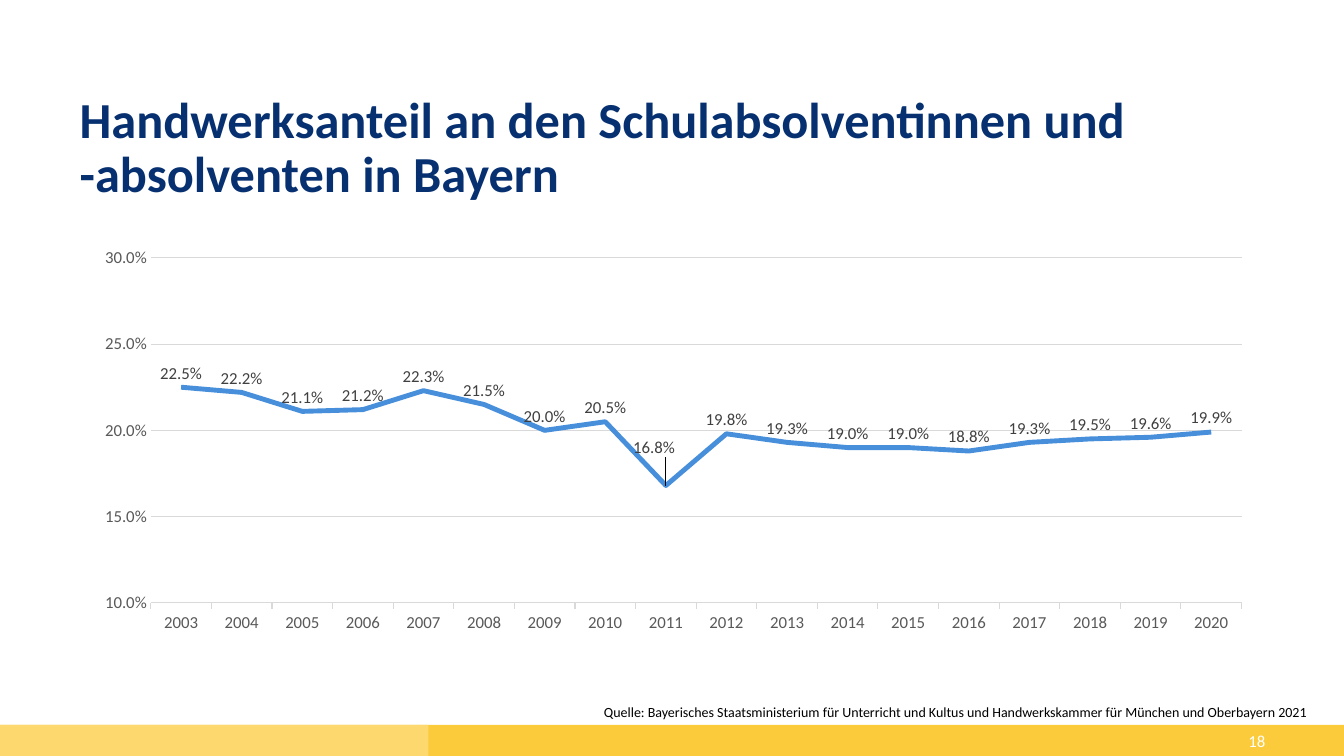
from lxml import etree
from pptx import Presentation
from pptx.chart.data import CategoryChartData
from pptx.dml.color import RGBColor
from pptx.enum.chart import XL_CHART_TYPE, XL_LABEL_POSITION, XL_MARKER_STYLE, XL_TICK_MARK
from pptx.enum.shapes import MSO_SHAPE
from pptx.enum.text import MSO_ANCHOR, MSO_AUTO_SIZE, PP_ALIGN
from pptx.oxml import parse_xml
from pptx.oxml.ns import nsdecls, qn
from pptx.util import Inches, Pt

LINE_CHART = XL_CHART_TYPE.LINE
LABEL_ABOVE = XL_LABEL_POSITION.ABOVE
NO_MARKER = XL_MARKER_STYLE.NONE
TICK_NONE, TICK_OUTSIDE = XL_TICK_MARK.NONE, XL_TICK_MARK.OUTSIDE
RECTANGLE = MSO_SHAPE.RECTANGLE
TOP, MIDDLE = MSO_ANCHOR.TOP, MSO_ANCHOR.MIDDLE
NO_AUTOFIT = MSO_AUTO_SIZE.NONE
LEFT, RIGHT = PP_ALIGN.LEFT, PP_ALIGN.RIGHT

NAVY = RGBColor(0x07, 0x30, 0x70)
BLUE = RGBColor(0x48, 0x8F, 0xDB)
YELLOW = RGBColor(0xFB, 0xCB, 0x3C)
LIGHT_YELLOW = RGBColor(0xFC, 0xD8, 0x6E)
GRID_GRAY = RGBColor(0xD9, 0xD9, 0xD9)
AXIS_GRAY = RGBColor(0x59, 0x59, 0x59)
LABEL_GRAY = RGBColor(0x40, 0x40, 0x40)
BLACK = RGBColor(0, 0, 0)
WHITE = RGBColor(0xFF, 0xFF, 0xFF)
FONT = "Calibri"
PERCENT = "0.0%"


def format_font(font, size, color, bold=False):
    for name, value in {"name": FONT, "size": Pt(size), "bold": bold}.items():
        setattr(font, name, value)
    font.color.rgb = color


def manual_layout(values):
    layout = parse_xml(f"<c:layout {nsdecls('c')}><c:manualLayout/></c:layout>")
    for name, value in values.items():
        etree.SubElement(layout[0], qn(f"c:{name}")).set("val", str(value))
    return layout


presentation = Presentation()
presentation.slide_width = Inches(13.33)
presentation.slide_height = Inches(7.5)
slide = presentation.slides.add_slide(presentation.slide_layouts[5])

for width, color in ((13.33, YELLOW), (4.25, LIGHT_YELLOW)):
    footer_bar = slide.shapes.add_shape(RECTANGLE, 0, Inches(7.19), Inches(width), Inches(0.31))
    footer_bar.shadow.inherit = False
    footer_bar.fill.solid()
    footer_bar.fill.fore_color.rgb = color
    footer_bar.line.fill.background()

title = slide.shapes.title
title.left, title.top, title.width, title.height = map(Inches, (0.79, 0.94, 11.76, 1.05))
page_number = slide.shapes.add_textbox(Inches(9.55), Inches(7.19), Inches(3), Inches(0.31))
source = slide.shapes.add_textbox(Inches(5.99), Inches(6.98), Inches(7.11), Inches(0.17))

texts = (
    (title, "Handwerksanteil an den Schulabsolventinnen und\v-absolventen in Bayern",
     36, NAVY, True, LEFT, TOP, True),
    (page_number, "18", 12, WHITE, False, RIGHT, MIDDLE, True),
    (source, "Quelle: Bayerisches Staatsministerium für Unterricht und Kultus und "
     "Handwerkskammer für München und Oberbayern 2021", 10, BLACK, False, LEFT, TOP, False),
)
for shape, text, size, color, bold, alignment, anchor, wrap in texts:
    frame = shape.text_frame
    frame.text = text
    frame_format = {
        "margin_left": 0, "margin_top": 0, "margin_right": 0, "margin_bottom": 0,
        "auto_size": NO_AUTOFIT, "word_wrap": wrap, "vertical_anchor": anchor,
    }
    for name, value in frame_format.items():
        setattr(frame, name, value)
    paragraph = frame.paragraphs[0]
    paragraph.alignment = alignment
    for run in paragraph.runs:
        format_font(run.font, size, color, bold)
title.text_frame.paragraphs[0].line_spacing = 0.9

chart_data = CategoryChartData(number_format=PERCENT)
chart_data.categories = [str(year) for year in range(2003, 2021)]
chart_data.add_series("Series 1", (
    0.225, 0.222, 0.211, 0.212, 0.223, 0.215, 0.200, 0.205, 0.168,
    0.198, 0.193, 0.190, 0.190, 0.188, 0.193, 0.195, 0.196, 0.199,
))
chart = slide.shapes.add_chart(
    LINE_CHART, Inches(0.79), Inches(2.36), Inches(11.76), Inches(3.98), chart_data
).chart
chart.has_title = False
chart.has_legend = False
format_font(chart.font, 10, BLACK)

plot_area = chart.plots[0]._element.getparent()
for layout in plot_area.findall(qn("c:layout")):
    plot_area.remove(layout)
plot_area.insert(0, manual_layout({
    "layoutTarget": "inner", "xMode": "edge", "yMode": "edge",
    "x": 0.06, "y": 0.05, "w": 0.92, "h": 0.86,
}))

value_axis = chart.value_axis
value_axis.minimum_scale = 0.1
value_axis.maximum_scale = 0.3
value_axis.major_unit = 0.05
value_axis.has_major_gridlines = True
value_axis.tick_labels.number_format = PERCENT
value_axis.tick_labels.number_format_is_linked = False
value_axis.format.line.fill.background()
for axis, tick_mark in ((chart.category_axis, TICK_OUTSIDE), (value_axis, TICK_NONE)):
    axis.major_tick_mark = tick_mark
    axis.minor_tick_mark = TICK_NONE
    format_font(axis.tick_labels.font, 12, AXIS_GRAY)

series = chart.plots[0].series[0]
series.smooth = False
series.marker.style = NO_MARKER
lines = (
    (value_axis.major_gridlines.format.line, GRID_GRAY, 0.75),
    (chart.category_axis.format.line, GRID_GRAY, 0.75),
    (series.format.line, BLUE, 3.5),
)
for line, color, width in lines:
    line.color.rgb = color
    line.width = Pt(width)

labels = series.data_labels
labels.show_value = True
labels.number_format = PERCENT
labels.number_format_is_linked = False
label_2011 = series.points[8].data_label
for label in (labels, label_2011):
    label.position = LABEL_ABOVE
    format_font(label.font, 12, LABEL_GRAY)
label_element = series._element.find(f"{qn('c:dLbls')}/{qn('c:dLbl')}")
label_element.insert(1, manual_layout({"x": -0.01, "y": -0.06}))

presentation.save("out.pptx")
